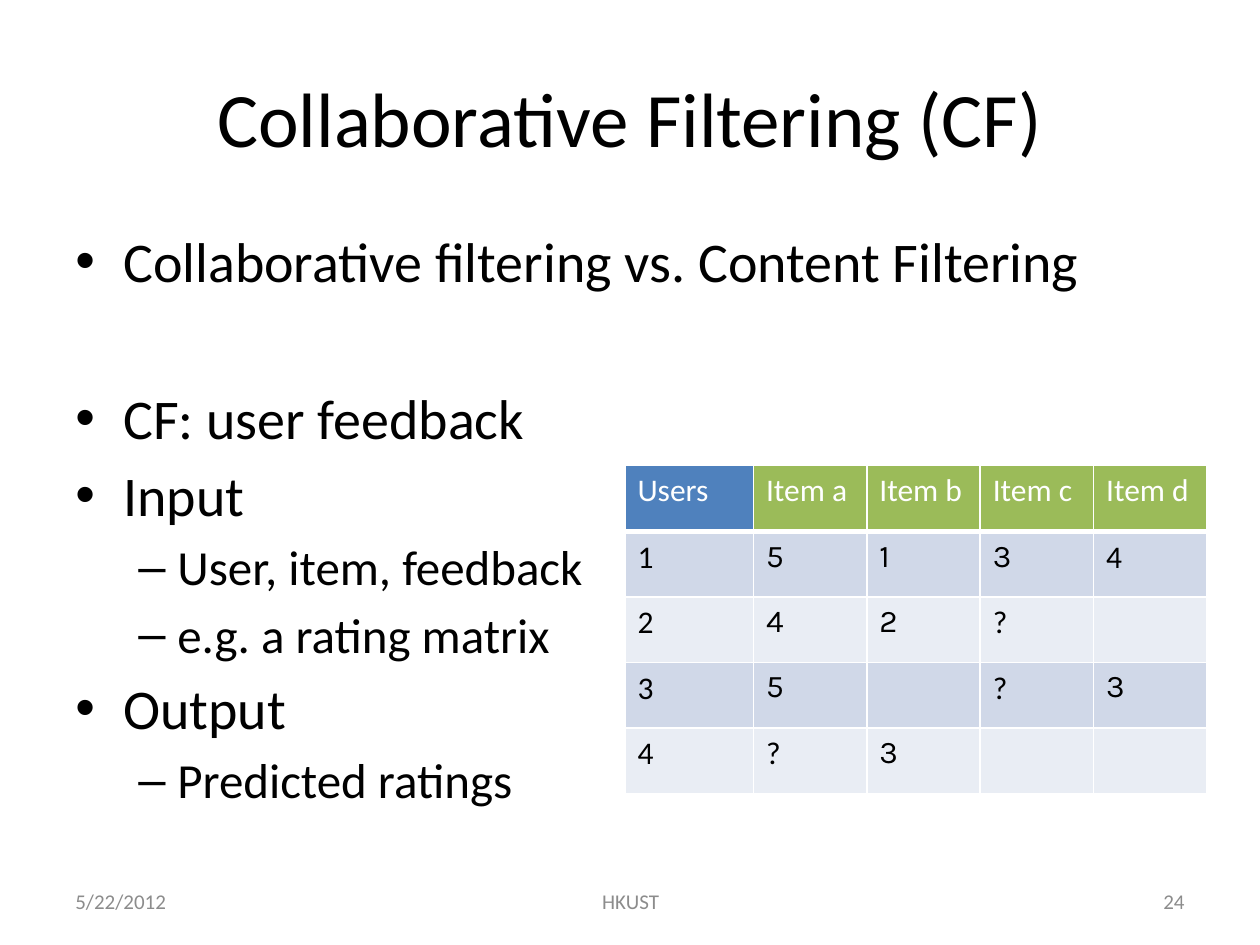
"""Build the collaborative filtering slide with its outline and rating matrix."""
import dataclasses
import typing

import lxml.etree
import pptx
import pptx.dml.color
import pptx.enum.text
import pptx.oxml.ns
import pptx.util

Inches = pptx.util.Inches
Pt = pptx.util.Pt
Align = pptx.enum.text.PP_ALIGN
Anchor = pptx.enum.text.MSO_ANCHOR
qn = pptx.oxml.ns.qn

COLOURS = {
    "black": "000000", "white": "FFFFFF", "grey": "8C8C8C", "blue": "4F81BD",
    "green": "9BBB59", "band_dark": "D0D8E8", "band_light": "E9EDF4",
}


@dataclasses.dataclass(frozen=True)
class Level:
    bullet: str
    size: int
    margin: float
    hanging: float
    before: float


@dataclasses.dataclass(frozen=True)
class Point:
    text: str
    level: int = 0
    extra_before: float = 0


@dataclasses.dataclass(frozen=True)
class Label:
    text: str
    left: float
    top: float
    width: float
    height: float
    size: int
    colour: str
    align: Align


@dataclasses.dataclass(frozen=True)
class Entry:
    text: str = ""
    font: str = "Calibri"


LEVELS = [Level("•", 32, 0.38, 0.38, 6), Level("–", 28, 0.81, 0.31, 5)]
POINTS = [
    Point("Collaborative filtering vs. Content Filtering"),
    Point("CF: user feedback", extra_before=45),
    Point("Input"),
    Point("User, item, feedback", 1),
    Point("e.g. a rating matrix", 1),
    Point("Output"),
    Point("Predicted ratings", 1),
]
LABELS = [
    Label("Collaborative Filtering (CF)", 0.5, 0.3, 9, 1.25, 44, "black", Align.CENTER),
    Label("5/22/2012", 0.5, 6.95, 2.33, 0.4, 12, "grey", Align.LEFT),
    Label("HKUST", 3.42, 6.95, 3.17, 0.4, 12, "grey", Align.CENTER),
    Label("24", 7.17, 6.95, 2.33, 0.4, 12, "grey", Align.RIGHT),
]


def rated(value: int) -> Entry:
    """Return a known rating in the rating font."""
    return Entry(str(value), "Karla")


UNKNOWN, EMPTY = Entry("?"), Entry()
MATRIX = [
    [Entry(text) for text in ("Users", "Item a", "Item b", "Item c", "Item d")],
    [Entry("1"), rated(5), rated(1), rated(3), Entry("4")],
    [Entry("2"), rated(4), rated(2), UNKNOWN, EMPTY],
    [Entry("3"), rated(5), EMPTY, UNKNOWN, rated(3)],
    [Entry("4"), UNKNOWN, rated(3), EMPTY, EMPTY],
]
COLUMN_WIDTHS = [1.02] + [0.9] * 4
ROW_HEIGHTS = [0.53] + [0.52] * 4


def rgb(name: str) -> pptx.dml.color.RGBColor:
    """Look up a named colour."""
    return pptx.dml.color.RGBColor.from_string(COLOURS[name])


def write(para: typing.Any, text: str, *, size: float, colour: str = "black",
          font: str = "Calibri", align: Align = Align.LEFT, before: float = 0) -> None:
    """Add formatted text to a paragraph."""
    para.alignment = align
    para.space_before = Pt(before)
    span = para.add_run()
    span.text = text
    span.font.size = Pt(size)
    span.font.name = font
    span.font.color.rgb = rgb(colour)


def add_box(page: typing.Any, left: float, top: float, width: float, height: float,
            anchor: Anchor) -> typing.Any:
    """Add a wrapping text box and return its frame."""
    box = page.shapes.add_textbox(Inches(left), Inches(top), Inches(width), Inches(height))
    box.text_frame.word_wrap = True
    box.text_frame.vertical_anchor = anchor
    return box.text_frame


def draw_label(page: typing.Any, label: Label) -> None:
    """Draw a single-line label."""
    frame = add_box(page, label.left, label.top, label.width, label.height, Anchor.MIDDLE)
    write(frame.paragraphs[0], label.text, size=label.size, colour=label.colour,
          align=label.align)


def draw_outline(page: typing.Any, points: list[Point]) -> None:
    """Draw the bulleted outline."""
    frame = add_box(page, 0.5, 1.75, 9, 4.95, Anchor.TOP)
    for index, point in enumerate(points):
        para = frame.add_paragraph() if index else frame.paragraphs[0]
        level = LEVELS[point.level]
        para.level = point.level
        write(para, point.text, size=level.size, before=level.before + point.extra_before)
        properties = para._p.get_or_add_pPr()
        properties.set("marL", str(Inches(level.margin)))
        properties.set("indent", str(-Inches(level.hanging)))
        lxml.etree.SubElement(properties, qn("a:buFont")).set("typeface", "Arial")
        lxml.etree.SubElement(properties, qn("a:buChar")).set("char", level.bullet)


def set_borders(cell: typing.Any, bottom: float) -> None:
    """Give a cell white borders, with its own bottom weight."""
    properties = cell._tc.get_or_add_tcPr()
    for index, (side, weight) in enumerate(zip("LRTB", (1, 1, 1, bottom))):
        line = lxml.etree.Element(qn(f"a:ln{side}"), w=str(Pt(weight)))
        fill = lxml.etree.SubElement(line, qn("a:solidFill"))
        lxml.etree.SubElement(fill, qn("a:srgbClr")).set("val", COLOURS["white"])
        properties.insert(index, line)


def cell_fill(row: int, column: int) -> str:
    """Choose the fill for a header or banded cell."""
    if row == 0:
        return "green" if column else "blue"
    return "band_dark" if row % 2 else "band_light"


def draw_matrix(page: typing.Any, matrix: list[list[Entry]]) -> None:
    """Draw the rating matrix."""
    table = page.shapes.add_table(
        len(matrix), len(matrix[0]), Inches(4.96), Inches(3.69),
        Inches(sum(COLUMN_WIDTHS)), Inches(sum(ROW_HEIGHTS))).table
    for column, width in zip(table.columns, COLUMN_WIDTHS):
        column.width = Inches(width)
    for row, height in zip(table.rows, ROW_HEIGHTS):
        row.height = Inches(height)
    for row, entries in enumerate(matrix):
        for column, entry in enumerate(entries):
            cell = table.cell(row, column)
            cell.fill.solid()
            cell.fill.fore_color.rgb = rgb(cell_fill(row, column))
            set_borders(cell, bottom=1 if row else 3)
            if entry.text:
                write(cell.text_frame.paragraphs[0], entry.text, size=18,
                      font=entry.font, colour="black" if row else "white")


def main() -> None:
    """Assemble and save the deck."""
    deck = pptx.Presentation()
    deck.slide_width, deck.slide_height = Inches(10), Inches(7.5)
    page = deck.slides.add_slide(deck.slide_layouts[6])
    for label in LABELS:
        draw_label(page, label)
    draw_outline(page, POINTS)
    draw_matrix(page, MATRIX)
    deck.save("out.pptx")


if __name__ == "__main__":
    main()
